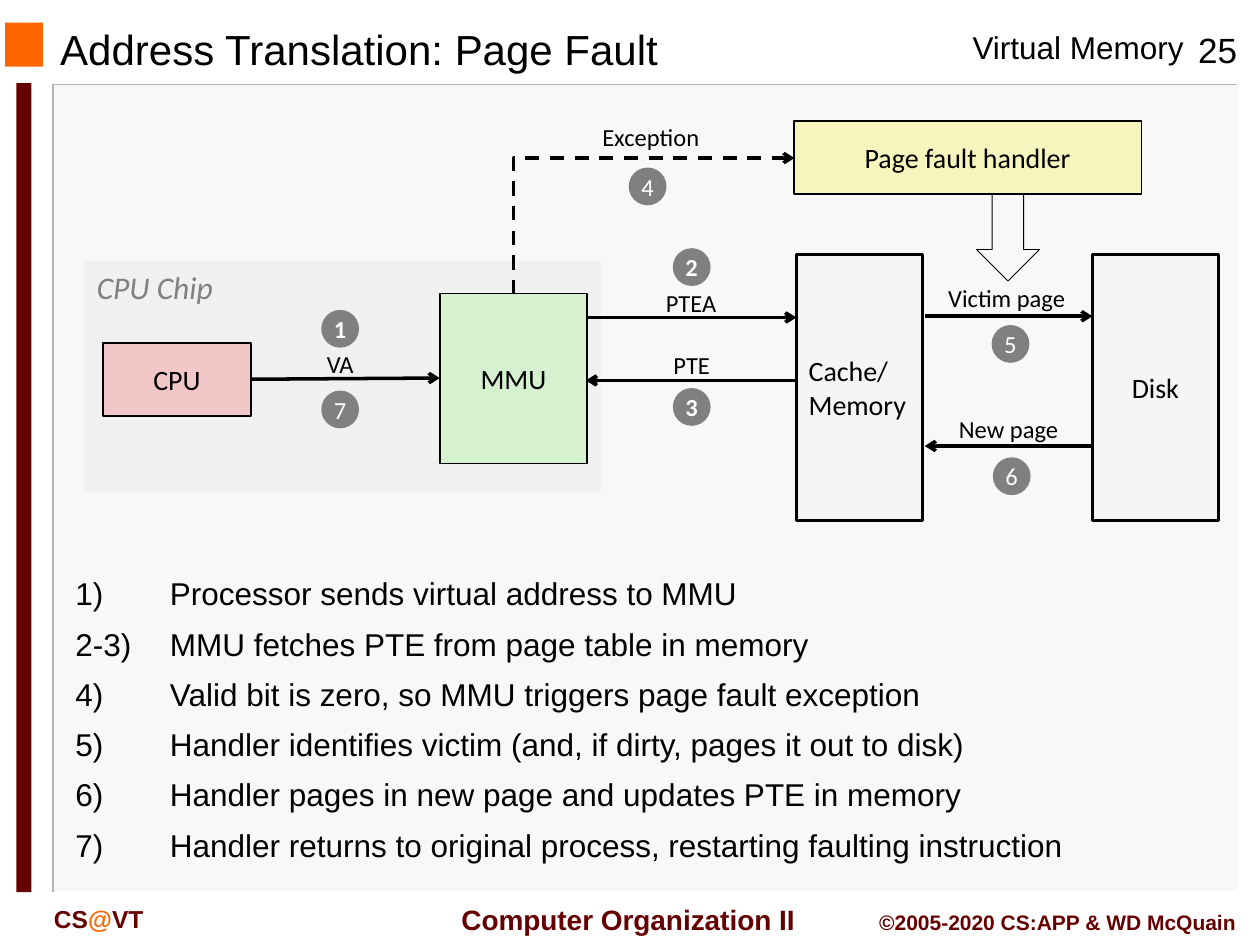
from lxml.etree import SubElement
from pptx import Presentation
from pptx.dml.color import RGBColor
from pptx.enum.dml import MSO_LINE
from pptx.enum.shapes import MSO_CONNECTOR, MSO_SHAPE
from pptx.enum.text import MSO_ANCHOR, PP_ALIGN
from pptx.oxml.ns import qn
from pptx.util import Inches, Pt

BLACK = RGBColor(0, 0, 0)
WHITE = RGBColor(255, 255, 255)
GRAY = RGBColor(0x80, 0x80, 0x80)
EDGE = RGBColor(0xB2, 0xB2, 0xB2)
PANEL = RGBColor(0xF8, 0xF8, 0xF8)
CHIP = RGBColor(0xF0, 0xF0, 0xF0)
STORE = RGBColor(0xF5, 0xF5, 0xF5)
ORANGE = RGBColor(0xFF, 0x66, 0x00)
MAROON = RGBColor(0x66, 0x00, 0x00)
GREEN = RGBColor(0xD5, 0xF1, 0xCF)
PINK = RGBColor(0xF1, 0xC7, 0xC7)
YELLOW = RGBColor(0xF6, 0xF5, 0xBD)
LEFT, MID, RIGHT = PP_ALIGN.LEFT, PP_ALIGN.CENTER, PP_ALIGN.RIGHT

deck = Presentation()
deck.slide_width, deck.slide_height = Inches(10), Inches(7.5)
COL, ROW = deck.slide_width // 100, deck.slide_height // 75
slide = deck.slides.add_slide(deck.slide_layouts[6])
shapes = slide.shapes


def put(box, text="", size=14, inks=(BLACK,), font="Calibri", align=MID, kind=None,
        fill=None, line=0, bold=False, slant=False, wrap=False, anchor=MSO_ANCHOR.MIDDLE):
    x, y, w, h = box
    place = [round(n) for n in (x * COL, y * ROW, w * COL, h * ROW)]
    if kind is None:
        shape = shapes.add_textbox(*place)
    else:
        shape = shapes.add_shape(kind, *place)
        shape.shadow.inherit = False
        if fill is None:
            shape.fill.background()
        else:
            shape.fill.solid()
            shape.fill.fore_color.rgb = fill
        if line:
            shape.line.color.rgb = BLACK
            shape.line.width = Pt(line)
        else:
            shape.line.fill.background()
    frame = shape.text_frame
    frame.word_wrap = wrap
    frame.vertical_anchor = anchor
    for i, row in enumerate(text.split("\n") if text else []):
        para = frame.add_paragraph() if i else frame.paragraphs[0]
        para.alignment = align
        for word, ink in zip(row.split("|"), inks):
            run = para.add_run()
            run.text = word
            run.font.name, run.font.size = font, Pt(size)
            run.font.bold, run.font.italic = bold, slant
            run.font.color.rgb = ink
    return shape


def link(x1, y1, x2, y2, kind=MSO_CONNECTOR.STRAIGHT):
    wire = shapes.add_connector(kind, round(x1 * COL), round(y1 * ROW),
                                round(x2 * COL), round(y2 * ROW))
    wire.line.color.rgb = BLACK
    wire.line.width = Pt(2)
    if kind == MSO_CONNECTOR.ELBOW:
        wire.line.dash_style = MSO_LINE.DASH
    SubElement(wire.line._get_or_add_ln(), qn("a:tailEnd"), type="arrow")
    SubElement(wire._element.spPr, qn("a:effectLst"))
    return wire


RECT, OVAL = MSO_SHAPE.RECTANGLE, MSO_SHAPE.OVAL

put((4.3, 6.7, 94, 64.1), kind=RECT, fill=PANEL)
for ink, points in (
    (EDGE, [(98.1, 6.7), (4.2, 6.7), (4.2, 70.8)]),
    (WHITE, [(98.3, 6.7), (98.3, 70.8), (4.4, 70.8)]),
):
    spots = [(round(x * COL), round(y * ROW)) for x, y in points]
    pen = shapes.build_freeform(*spots[0])
    pen.add_line_segments(spots[1:], close=False)
    edge = pen.convert_to_shape()
    edge.shadow.inherit = False
    edge.fill.background()
    edge.line.color.rgb = ink
    edge.line.width = Pt(1)
put((0.4, 1.8, 3, 3.5), kind=RECT, fill=ORANGE)
put((1.3, 6.6, 1.2, 64.2), kind=RECT, fill=MAROON)

put((76.2, 1.7, 18.8, 4), "Virtual Memory", 18, font="Arial", align=LEFT)
put((93.3, 1.8, 6.7, 4.3), "25", 20, font="Arial", wrap=True)
put((3.8, 1.3, 63.3, 5.1), "Address Translation: Page Fault", 24,
    font="Arial", align=LEFT, wrap=True)
for box, text, size, inks, align in (
    ((34.8, 71.1, 29.5, 3.7), " Computer Organization II", 16, (MAROON,), MID),
    ((3.3, 71.3, 15, 3.3), "CS|@|VT", 14, (MAROON, ORANGE, MAROON), LEFT),
    ((68.3, 71.7, 30.8, 3), "©2005-2020 CS:APP & WD McQuain", 12, (MAROON,), RIGHT),
):
    put(box, text, size, inks, "Arial", align, bold=True)

put((6.7, 20.7, 41, 18.3), kind=RECT, fill=CHIP)
put((6.7, 20.8, 11.6, 4), "CPU Chip", 18, (GRAY,), align=LEFT, slant=True)
for box, text, fill, line, align in (
    ((34.9, 23.3, 11.7, 13.5), "MMU", GREEN, 1, MID),
    ((63.2, 20.2, 10, 21.1), "Cache/\nMemory", STORE, 1.5, LEFT),
    ((8.2, 27.2, 11.7, 5.8), "CPU", PINK, 1, MID),
    ((86.7, 20.2, 10, 21.1), "Disk", STORE, 1.5, MID),
    ((63, 9.6, 27.6, 5.8), "Page fault handler", YELLOW, 1, MID),
):
    put(box, text, 16, align=align, kind=RECT, fill=fill, line=line)
put((77.5, 15.4, 5, 6.9), kind=MSO_SHAPE.DOWN_ARROW, line=0.5)

for ends in (
    (19.9, 30.1, 34.9, 30),
    (46.5, 25.2, 63.2, 25.2),
    (63.2, 30.2, 46.5, 30.2),
    (73.4, 25.1, 86.7, 25.1),
    (86.7, 35.4, 73.4, 35.4),
):
    link(*ends)
bend = link(57.3, 29.1, 46.5, 6.8, MSO_CONNECTOR.ELBOW)
bend._element.spPr.find(qn("a:prstGeom")).set("prst", "bentConnector2")
bend._element.spPr.find(qn("a:xfrm")).set("rot", "5400000")

for x, y, w, text in (
    (24.9, 27.2, 4.2, "VA"),
    (51.8, 22.4, 6.1, "PTEA"),
    (52.4, 27.3, 5, "PTE"),
    (74.1, 22, 11.6, "Victim page"),
    (75, 32.4, 10.1, "New page"),
    (46.7, 9.2, 9.9, "Exception"),
):
    put((x, y, w, 3.3), text)

steps = ((25.5, 24.6), (53.4, 19.7), (53.4, 30.8), (49.9, 13.3),
         (78.7, 25.8), (78.8, 36.3), (25.5, 31))
for i, (x, y) in enumerate(steps, 1):
    put((x, y, 3, 3), str(i), inks=(WHITE,), kind=OVAL, fill=GRAY, bold=i < 4)

list_text = "\n".join((
    "1)\tProcessor sends virtual address to MMU",
    "2-3)\tMMU fetches PTE from page table in memory",
    "4)\tValid bit is zero, so MMU triggers page fault exception",
    "5)\tHandler identifies victim (and, if dirty, pages it out to disk)",
    "6)\tHandler pages in new page and updates PTE in memory",
    "7)\tHandler returns to original process, restarting faulting instruction",
))
body = put((5, 45.8, 87.5, 23.4), list_text, 18, font="Arial", align=LEFT,
           wrap=True, anchor=MSO_ANCHOR.TOP)
for para in body.text_frame.paragraphs:
    para.line_spacing = 0.75
    para.space_before = Pt(12.5)
    props = para._p.get_or_add_pPr()
    props.set("marL", str(round(7.5 * COL)))
    props.set("indent", str(round(-7.5 * COL)))

deck.save("out.pptx")
